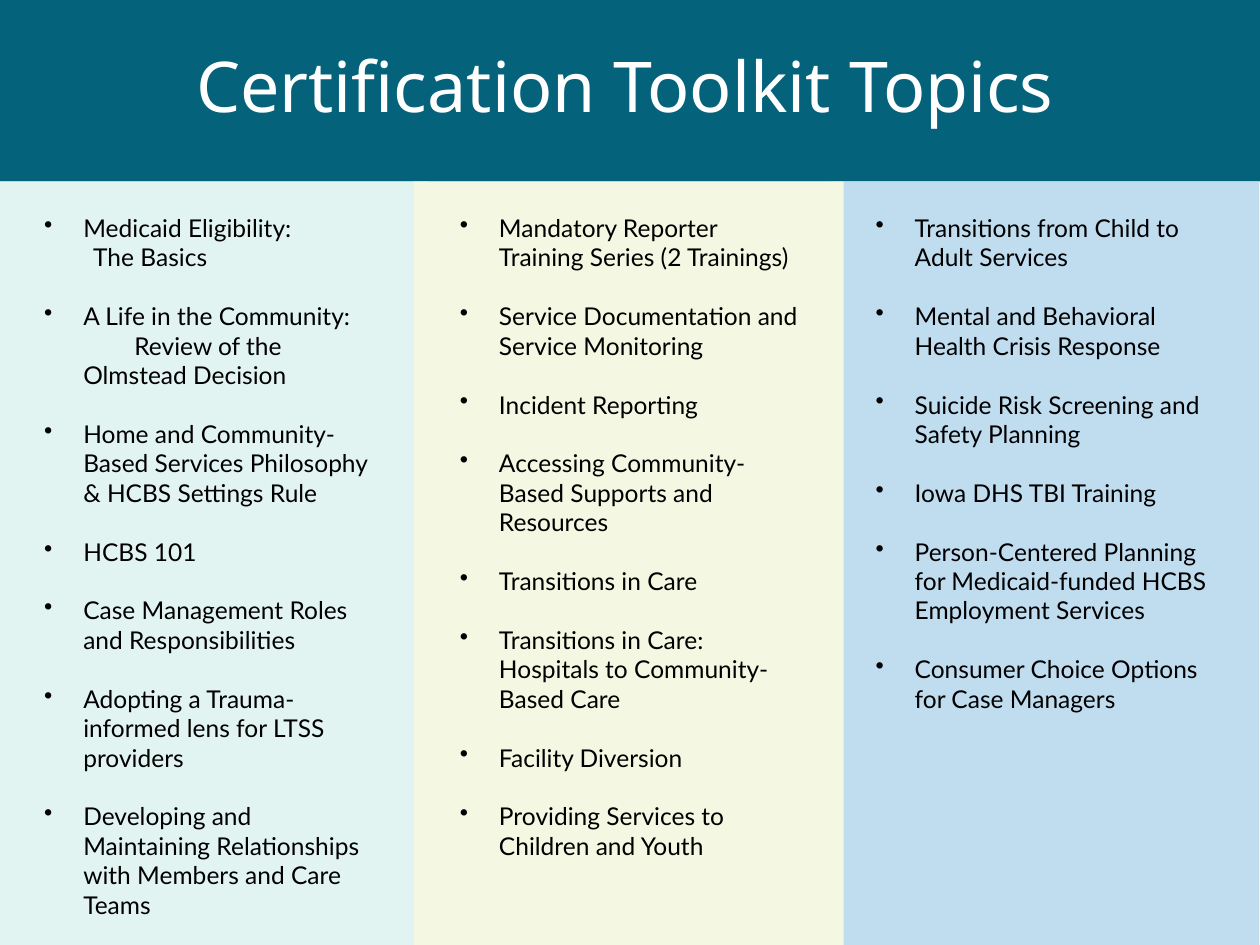
"""Build the Certification Toolkit Topics slide."""
import pptx
import pptx.dml.color
import pptx.enum.shapes
import pptx.enum.text
import pptx.oxml
import pptx.oxml.ns
import pptx.util
from dataclasses import dataclass

Cm = pptx.util.Cm
Pt = pptx.util.Pt
Color = pptx.dml.color.RGBColor.from_string

TITLE = "Certification Toolkit Topics"
TOPICS = [
    [
        ("Medicaid Eligibility:", "The Basics", 0.2),
        ("A Life in the Community:", "Review of the\vOlmstead Decision", 1.03),
        "Home and Community-Based Services Philosophy & HCBS Settings Rule",
        "HCBS 101",
        "Case Management Roles and Responsibilities",
        "Adopting a Trauma-informed lens for LTSS providers",
        "Developing and Maintaining Relationships with Members and Care Teams",
    ],
    [
        "Mandatory Reporter Training Series (2 Trainings)",
        "Service Documentation and Service Monitoring",
        "Incident Reporting",
        "Accessing Community-Based Supports and Resources",
        "Transitions in Care",
        "Transitions in Care: Hospitals to Community-Based Care",
        "Facility Diversion",
        "Providing Services to Children and Youth",
    ],
    [
        "Transitions from Child to Adult Services",
        "Mental and Behavioral Health Crisis Response",
        "Suicide Risk Screening and Safety Planning",
        "Iowa DHS TBI Training",
        "Person-Centered Planning for Medicaid-funded HCBS Employment Services",
        "Consumer Choice Options for Case Managers",
    ],
]


@dataclass(frozen=True)
class Theme:
    banner: str = "04627A"
    panels: tuple = ("E2F4F1", "F4F7E1", "C0DCEF")
    title: tuple = ("Noto Sans", 40, "FFFFFF")
    body: tuple = ("Lato", 14, "000000")
    topic_gap: float = 16.8


THEME = Theme()
SLIDE_WIDTH, SLIDE_HEIGHT = 25.4, 19.05
BANNER_BOTTOM = 3.66
COLUMN_LEFT, COLUMN_STEP, PANEL_WIDTH = -0.03, 8.38, 8.66
TEXT_INSET, TEXT_TOP, TEXT_WIDTH, TEXT_HEIGHT = 0.67, 4.17, 7.37, 14.1
HANGING = 0.79


def apply_format(target, values):
    for name, value in values.items():
        setattr(target, name, value)


def style_text(paragraph, style):
    name, size, color = style
    apply_format(paragraph.font, {"name": name, "size": Pt(size)})
    paragraph.font.color.rgb = Color(color)


def add_panel(slide, left, top, width, height, color):
    shape = slide.shapes.add_shape(
        pptx.enum.shapes.MSO_SHAPE.RECTANGLE, Cm(left), Cm(top), Cm(width), Cm(height))
    shape.shadow.inherit = False
    shape.fill.solid()
    shape.fill.fore_color.rgb = Color(color)
    shape.line.fill.background()
    return shape


def add_banner(slide):
    shape = add_panel(slide, -0.2, -0.03, SLIDE_WIDTH + 0.2, BANNER_BOTTOM + 0.03, THEME.banner)
    shape.text_frame.vertical_anchor = pptx.enum.text.MSO_ANCHOR.MIDDLE
    paragraph = shape.text_frame.paragraphs[0]
    apply_format(paragraph, {
        "text": TITLE, "alignment": pptx.enum.text.PP_ALIGN.CENTER, "line_spacing": 0.9})
    style_text(paragraph, THEME.title)


def add_line(text_frame, text, first_indent, bulleted, spaced):
    paragraph = text_frame.paragraphs[0]
    if paragraph.runs:
        paragraph = text_frame.add_paragraph()
    apply_format(paragraph, {"text": text, "space_before": Pt(THEME.topic_gap if spaced else 0)})
    properties = paragraph._p.get_or_add_pPr()
    properties.set("marL", str(Cm(HANGING)))
    properties.set("indent", str(Cm(first_indent)))
    if bulleted:
        bullet = pptx.oxml.parse_xml(
            f'<a:buChar {pptx.oxml.ns.nsdecls("a")} char="•"/>')
        properties.append(bullet)
    style_text(paragraph, THEME.body)


def add_topics(slide, left, topics):
    box = slide.shapes.add_textbox(Cm(left), Cm(TEXT_TOP), Cm(TEXT_WIDTH), Cm(TEXT_HEIGHT))
    box.text_frame.word_wrap = True
    for index, topic in enumerate(topics):
        heading, *detail = (topic,) if isinstance(topic, str) else topic
        add_line(box.text_frame, heading, -HANGING, True, index > 0)
        if detail:
            add_line(box.text_frame, *detail, False, False)


def main():
    presentation = pptx.Presentation()
    apply_format(presentation, {
        "slide_width": Cm(SLIDE_WIDTH), "slide_height": Cm(SLIDE_HEIGHT)})
    slide = presentation.slides.add_slide(presentation.slide_layouts[6])
    add_banner(slide)
    lefts = [COLUMN_LEFT + index * COLUMN_STEP for index in range(len(TOPICS))]
    for index in (0, 2, 1):
        add_panel(slide, lefts[index], BANNER_BOTTOM, PANEL_WIDTH,
                  SLIDE_HEIGHT - BANNER_BOTTOM, THEME.panels[index])
    for left, topics in zip(lefts, TOPICS):
        add_topics(slide, left + TEXT_INSET, topics)
    presentation.save("out.pptx")


if __name__ == "__main__":
    main()
